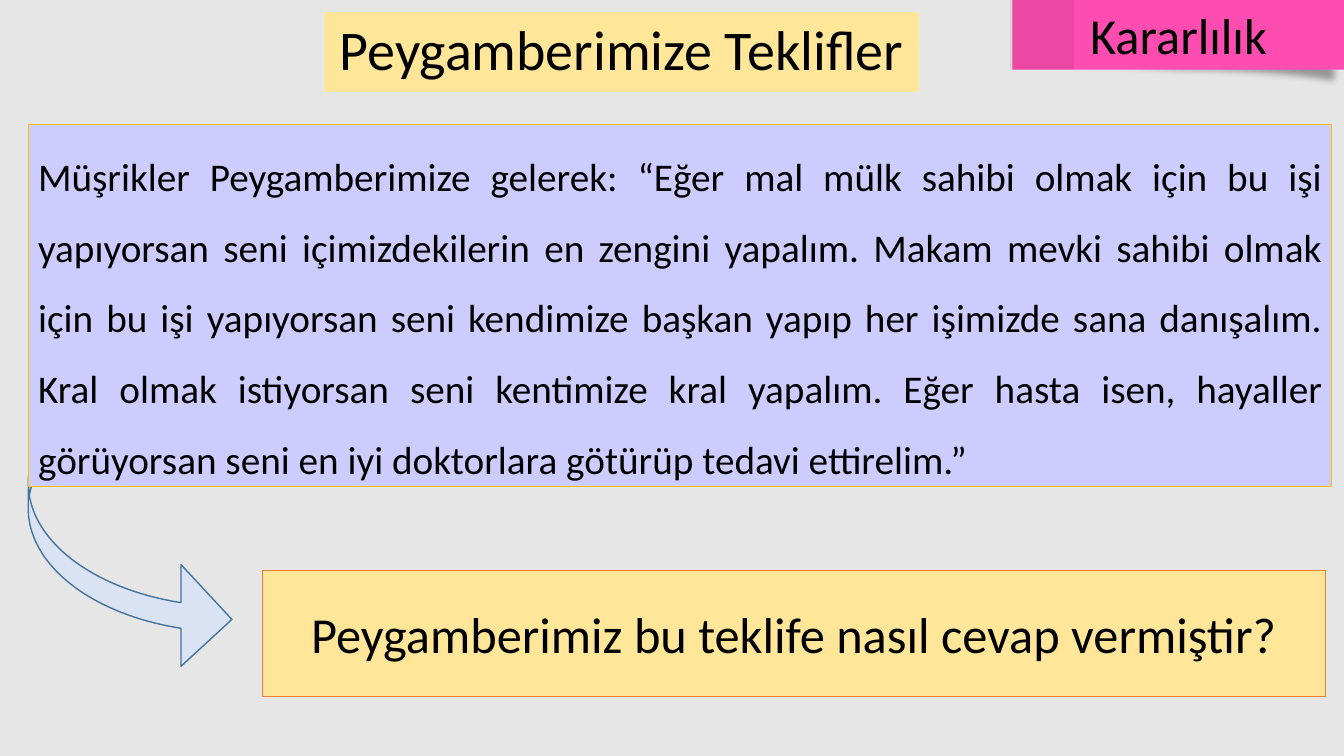
from lxml import etree
from pptx import Presentation
from pptx.dml.color import RGBColor
from pptx.enum.shapes import MSO_SHAPE
from pptx.enum.text import MSO_ANCHOR, PP_ALIGN
from pptx.oxml.ns import qn
from pptx.util import Inches, Pt

RECT = MSO_SHAPE.RECTANGLE
CURVE = MSO_SHAPE.CURVED_RIGHT_ARROW
MIDDLE = MSO_ANCHOR.MIDDLE
CENTER, JUSTIFY = PP_ALIGN.CENTER, PP_ALIGN.JUSTIFY

OFFER = (
    "Müşrikler Peygamberimize gelerek: “Eğer mal mülk sahibi olmak için bu işi "
    "yapıyorsan seni içimizdekilerin en zengini yapalım. Makam mevki sahibi olmak "
    "için bu işi yapıyorsan seni kendimize başkan yapıp her işimizde sana danışalım. "
    "Kral olmak istiyorsan seni kentimize kral yapalım. Eğer hasta isen, hayaller "
    "görüyorsan seni en iyi doktorlara götürüp tedavi ettirelim.”"
)


def color(code):
    return RGBColor.from_string(code)


def bezier(p0, p1, p2, p3, steps=12):
    """Points along a cubic curve, without its start."""
    points = []
    for i in range(1, steps + 1):
        t = i / steps
        u = 1 - t
        points.append(tuple(
            u**3 * a + 3 * u * u * t * b + 3 * u * t * t * c + t**3 * d
            for a, b, c, d in zip(p0, p1, p2, p3)))
    return points


class Deck:
    font = "Calibri"
    ink = "000000"
    cream = "FFE699"

    def __init__(self):
        self.file = Presentation()
        self.file.slide_width = Inches(13.33)
        self.file.slide_height = Inches(7.5)
        self.slide = self.file.slides.add_slide(self.file.slide_layouts[5])
        back = self.slide.background.fill
        back.solid()
        back.fore_color.rgb = color("E7E6E6")

    def paint(self, shape, fill, line=None, width=0.5):
        shape.fill.solid()
        shape.fill.fore_color.rgb = color(fill)
        if line:
            shape.line.color.rgb = color(line)
            shape.line.width = Pt(width)
        else:
            shape.line.fill.background()

    def label(self, shape, text, size, align=CENTER, space=1.0):
        frame = shape.text_frame
        frame.word_wrap = True
        frame.vertical_anchor = MIDDLE
        para = frame.paragraphs[0]
        para.alignment = align
        para.line_spacing = space
        run = para.add_run()
        run.text = text
        run.font.name = self.font
        run.font.size = Pt(size)
        run.font.color.rgb = color(self.ink)

    def title(self, text, box, fill, line):
        shape = self.slide.shapes.title
        shape.left, shape.top, shape.width, shape.height = map(Inches, box)
        self.paint(shape, fill, line)
        self.label(shape, text, 40, space=0.9)

    def shape(self, kind, box, fill, line=None, width=0.5):
        shape = self.slide.shapes.add_shape(kind, *map(Inches, box))
        self.paint(shape, fill, line, width)
        shape.shadow.inherit = False
        return shape

    def outline(self, points, fill):
        start, *rest = [(Inches(x), Inches(y)) for x, y in points]
        pen = self.slide.shapes.build_freeform(*start)
        pen.add_line_segments(rest, close=True)
        shape = pen.convert_to_shape()
        self.paint(shape, fill)
        shape.shadow.inherit = False
        return shape

    def shade(self, shape, alpha, blur, dist, angle):
        effects = shape._element.spPr.find(qn("a:effectLst"))
        outer = etree.SubElement(
            effects, qn("a:outerShdw"), blurRad=str(Pt(blur)),
            dist=str(Pt(dist)), dir=str(angle * 60000), rotWithShape="0")
        self.tint(etree.SubElement(outer, qn("a:srgbClr"), val=self.ink), alpha)

    def tint(self, node, alpha):
        etree.SubElement(node, qn("a:alpha"), val=str(alpha * 1000))


def main():
    deck = Deck()

    # Title
    deck.title("Peygamberimize Teklifler", (3.21, 0.11, 5.91, 0.81),
               deck.cream, "DEEBF7")

    # Arrow from the offer to the question
    arrow = deck.shape(CURVE, (0.28, 3.56, 2.02, 3.09), "DAE3F3", "43739E", 1)
    for i, value in enumerate((0.126, 0.5, 0.25)):
        arrow.adjustments[i] = value

    # Offer and question
    offer = deck.shape(RECT, (0.28, 1.23, 12.93, 3.6), "CCCCFF", "FFC000")
    deck.label(offer, OFFER, 28, JUSTIFY, 1.5)
    ask = deck.shape(RECT, (2.6, 5.66, 10.55, 1.25), deck.cream, "ED7D31")
    deck.label(ask, "Peygamberimiz bu teklife nasıl cevap vermiştir?", 36)

    # Corner tab with its curled shadow
    edge = [(10.21, 0.48), (13.23, 0.48), (13.23, 0.7), (13.2, 0.69)]
    edge += bezier(edge[-1], (12.82, 0.63), (12.3, 0.59), (11.72, 0.59))
    edge += bezier(edge[-1], (11.22, 0.55), (9.95, 0.5), edge[0])
    curl = deck.outline(edge, "D0CECE")
    deck.shade(curl, 34, 5, 7, 90)
    tab = deck.shape(RECT, (10.04, 0, 3.3, 0.69), "FD4DB0")
    deck.label(tab, "Kararlılık", 36)
    fold = deck.shape(RECT, (9.99, 0.03, 0.69, 0.63), deck.ink)
    fold.rotation = 270
    deck.tint(fold._element.spPr.find(qn("a:solidFill"))[0], 7)

    deck.file.save("out.pptx")


if __name__ == "__main__":
    main()
